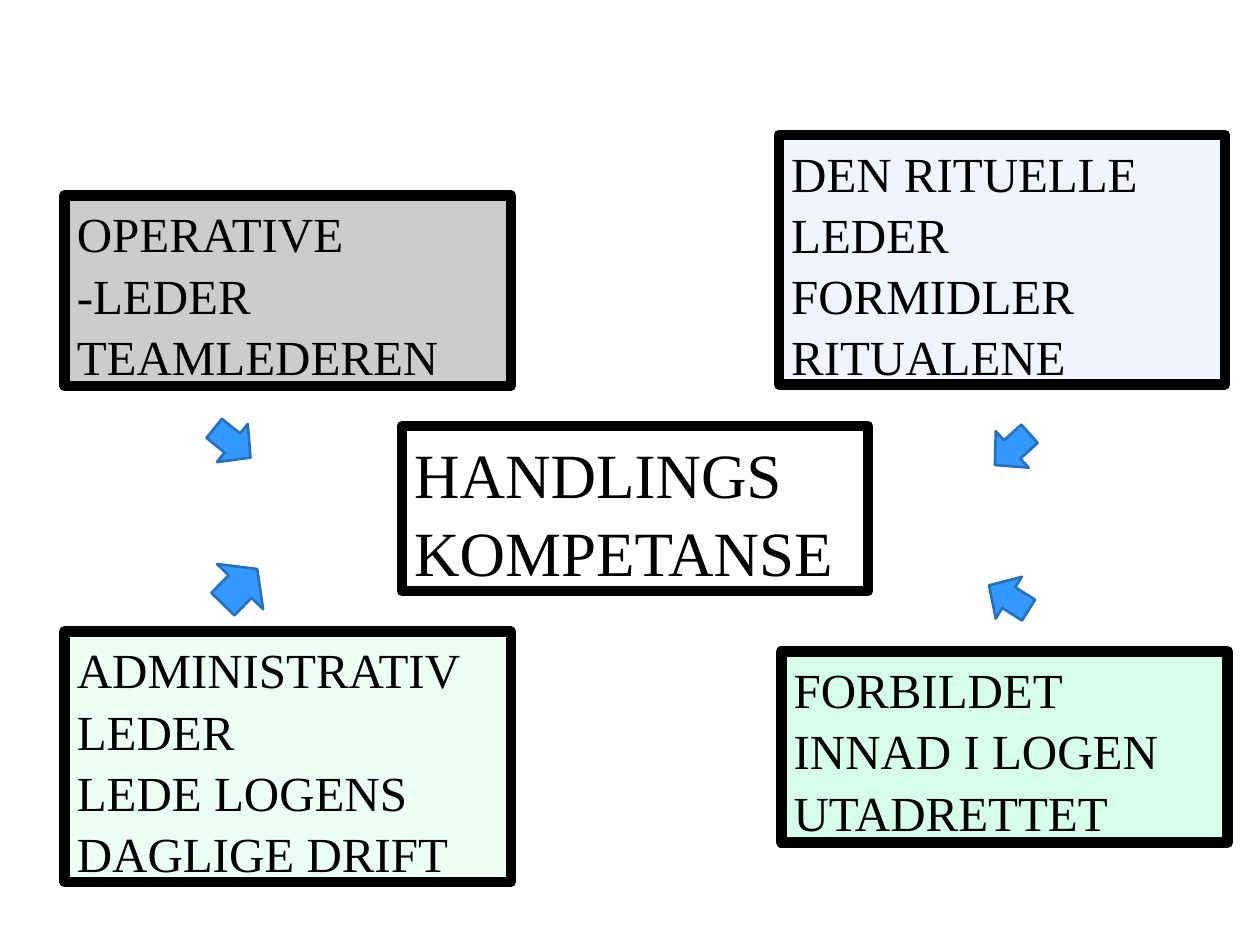
from dataclasses import dataclass

from pptx import Presentation
from pptx import util as u
from pptx.dml.color import RGBColor
from pptx.enum import shapes, text


@dataclass(frozen=True)
class Theme:
    font: str = "Times New Roman"
    ink: str = "000000"
    arrow_fill: str = "3399FF"
    arrow_line: str = "2671BD"
    role_size: int = 28
    core_size: int = 36
    box_line: float = 6
    arrow_width: float = 1.5
    spacing: float = 1.04


@dataclass(frozen=True)
class Panel:
    left: float
    top: float
    width: float
    height: float
    fill: str
    lines: tuple[str, ...]
    size: int


@dataclass(frozen=True)
class Arrow:
    left: float
    top: float
    rotation: float
    width: float = 0.99
    height: float = 0.94


THEME = Theme()
ROLE_WIDTH = 9.0

PANELS = (
    Panel(1.3, 3.94, ROLE_WIDTH, 3.84, "CCCCCC",
          ("OPERATIVE -LEDER", "TEAMLEDEREN"), THEME.role_size),
    Panel(15.75, 13.13, ROLE_WIDTH, 3.86, "D6FFEB",
          ("FORBILDET", "INNAD I LOGEN", "UTADRETTET"), THEME.role_size),
    Panel(1.3, 12.73, ROLE_WIDTH, 5.05, "EBFFF5",
          ("ADMINISTRATIV LEDER", "LEDE LOGENS DAGLIGE DRIFT"), THEME.role_size),
    Panel(15.7, 2.72, ROLE_WIDTH, 5.03, "EFF4FF",
          ("DEN RITUELLE LEDER", "FORMIDLER RITUALENE"), THEME.role_size),
    Panel(8.1, 8.59, 9.4, 3.33, "FFFFFF",
          ("HANDLINGS", "KOMPETANSE"), THEME.core_size),
)

ARROWS = (
    Arrow(19.91, 8.59, 48),
    Arrow(4.19, 11.33, 224.4, 1.3, 0.99),
    Arrow(19.84, 11.58, 122),
    Arrow(4.19, 8.46, 308.9),
)


def add_block(page, kind, place: Panel | Arrow, *, fill: str, line: str, width: float):
    block = page.shapes.add_shape(
        kind, u.Cm(place.left), u.Cm(place.top), u.Cm(place.width), u.Cm(place.height)
    )
    block.shadow.inherit = False
    block.fill.solid()
    block.fill.fore_color.rgb = RGBColor.from_string(fill)
    block.line.color.rgb = RGBColor.from_string(line)
    block.line.width = u.Pt(width)
    return block


def write_text(box, lines: tuple[str, ...], *, size: int, color: str) -> None:
    frame = box.text_frame
    frame.word_wrap = True
    frame.vertical_anchor = text.MSO_ANCHOR.TOP
    for index, line in enumerate(lines):
        para = frame.add_paragraph() if index else frame.paragraphs[0]
        para.alignment = text.PP_ALIGN.LEFT
        para.line_spacing = THEME.spacing
        span = para.add_run()
        span.text = line
        span.font.name = THEME.font
        span.font.size = u.Pt(size)
        span.font.color.rgb = RGBColor.from_string(color)


def draw_panel(page, panel: Panel) -> None:
    box = add_block(page, shapes.MSO_SHAPE.RECTANGLE, panel,
                    fill=panel.fill, line=THEME.ink, width=THEME.box_line)
    write_text(box, panel.lines, size=panel.size, color=THEME.ink)


def draw_arrow(page, arrow: Arrow) -> None:
    block = add_block(page, shapes.MSO_SHAPE.DOWN_ARROW, arrow, fill=THEME.arrow_fill,
                      line=THEME.arrow_line, width=THEME.arrow_width)
    block.rotation = arrow.rotation


def main() -> None:
    deck = Presentation()
    deck.slide_width, deck.slide_height = u.Cm(25.4), u.Cm(19.05)
    page = deck.slides.add_slide(deck.slide_layouts.get_by_name("Blank"))
    for panel in PANELS:
        draw_panel(page, panel)
    for arrow in ARROWS:
        draw_arrow(page, arrow)
    deck.save("out.pptx")


if __name__ == "__main__":
    main()
